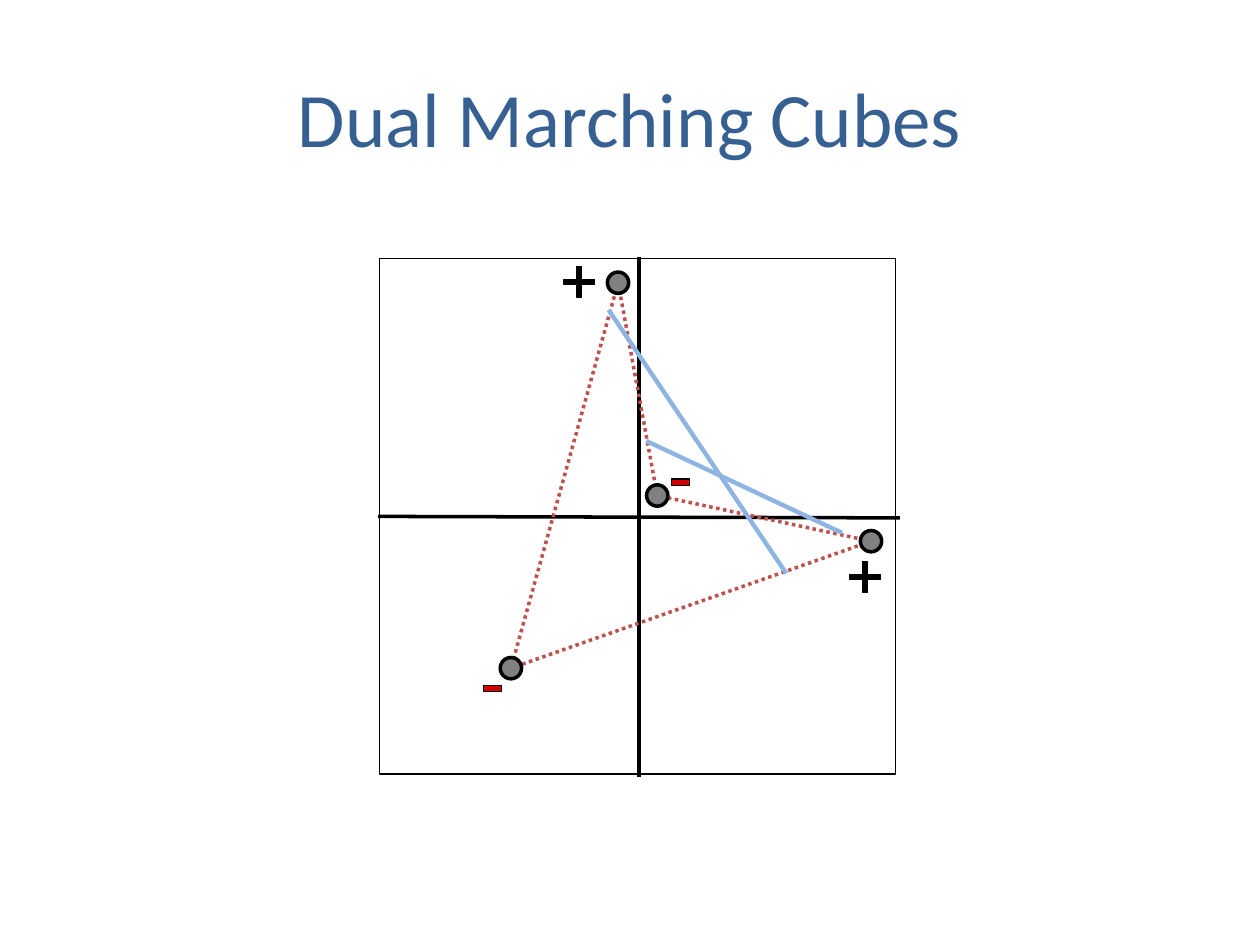
from dataclasses import dataclass

from lxml.etree import SubElement
from pptx import Presentation
from pptx.dml.color import RGBColor
from pptx.enum.dml import MSO_LINE
from pptx.enum.shapes import MSO_CONNECTOR, MSO_SHAPE
from pptx.enum.text import MSO_ANCHOR, PP_ALIGN
from pptx.oxml.ns import qn
from pptx.util import Cm, Pt


@dataclass(frozen=True)
class Theme:
    font: str = "Calibri"
    title_size: float = 44
    title: str = "376092"
    ink: str = "000000"
    edge: str = "C0504D"
    contour: str = "8EB4E3"
    minus: str = "D40000"
    node: str = "808080"
    hairline: float = 0
    edge_width: float = 2
    contour_width: float = 2.5


def write_text(tf, text, *, font, size, color, align=PP_ALIGN.CENTER):
    p = tf.paragraphs[0]
    p.alignment = align
    r = p.add_run()
    r.text = text
    r.font.name = font
    r.font.size = Pt(size)
    r.font.color.rgb = RGBColor.from_string(color)


class Sketch:
    """Draws on one slide in a theme; all lengths are in centimetres."""

    def __init__(self, slide, theme):
        self.s = slide
        self.theme = theme

    def title(self, text, left, top, width, height):
        sp = self.s.shapes.title
        sp.left, sp.top, sp.width, sp.height = map(Cm, (left, top, width, height))
        tf = sp.text_frame
        tf.word_wrap = True
        tf.vertical_anchor = MSO_ANCHOR.MIDDLE
        write_text(tf, text, font=self.theme.font, size=self.theme.title_size,
                   color=self.theme.title)

    def format(self, sp, fill, width):
        sp.shadow.inherit = False
        if fill:
            sp.fill.solid()
            sp.fill.fore_color.rgb = RGBColor.from_string(fill)
        else:
            sp.fill.background()
        sp.line.color.rgb = RGBColor.from_string(self.theme.ink)
        sp.line.width = Pt(width)

    def centred(self, kind, center, width, height, fill=None, line_width=0):
        x, y = center
        sp = self.s.shapes.add_shape(kind, Cm(x - width / 2), Cm(y - height / 2),
                                     Cm(width), Cm(height))
        self.format(sp, fill, line_width)

    def node(self, center):
        self.centred(MSO_SHAPE.OVAL, center, 0.43, 0.43, self.theme.node,
                     self.theme.edge_width)

    def minus(self, center):
        self.centred(MSO_SHAPE.RECTANGLE, center, 0.36, 0.13, self.theme.minus)

    def plus(self, center, arm=0.31, half=0.05):
        x, y = center
        offsets = [(-half, arm), (-half, half), (-arm, half), (-arm, -half),
                   (-half, -half), (-half, -arm), (half, -arm), (half, -half),
                   (arm, -half), (arm, half), (half, half), (half, arm)]
        points = [(Cm(x + dx), Cm(y + dy)) for dx, dy in offsets]
        builder = self.s.shapes.build_freeform(*points[0])
        builder.add_line_segments(points[1:], close=True)
        self.format(builder.convert_to_shape(), self.theme.ink, self.theme.hairline)

    def line(self, start, end, color, width, dash=None):
        cn = self.s.shapes.add_connector(MSO_CONNECTOR.STRAIGHT,
                                         *map(Cm, (*start, *end)))
        cn.line.color.rgb = RGBColor.from_string(color)
        cn.line.width = Pt(width)
        if dash:
            cn.line.dash_style = dash
        SubElement(cn._element.spPr, qn("a:effectLst"))


def main():
    prs = Presentation()
    prs.slide_width, prs.slide_height = Cm(25.4), Cm(19.05)
    theme = Theme()
    sketch = Sketch(prs.slides.add_slide(prs.slide_layouts[5]), theme)
    sketch.title("Dual Marching Cubes", 1.27, 0.76, 22.86, 3.18)

    # Four grid cells
    sketch.centred(MSO_SHAPE.RECTANGLE, (12.85, 10.41), 10.41, 10.39)
    sketch.line((12.88, 5.18), (12.88, 15.67), theme.ink, theme.hairline)
    sketch.line((7.62, 10.41), (18.14, 10.44), theme.ink, theme.hairline)

    # Dual cell: each node is joined to the next, the last to the first
    top, inner, right, bottom = nodes = [
        (12.46, 5.7), (13.25, 9.99), (17.56, 10.91), (10.3, 13.47)]
    for start, end in ((right, inner), (right, bottom), (top, bottom), (top, inner)):
        sketch.line(start, end, theme.edge, theme.edge_width, MSO_LINE.ROUND_DOT)

    for start, end in (((16.97, 10.74), (13.03, 8.89)),
                       ((15.85, 11.56), (12.27, 6.25))):
        sketch.line(start, end, theme.contour, theme.contour_width)

    for center in ((11.68, 5.68), (17.44, 11.63)):
        sketch.plus(center)
    for center in ((13.72, 9.72), (9.93, 13.88)):
        sketch.minus(center)
    for center in nodes:
        sketch.node(center)

    prs.save("out.pptx")


if __name__ == "__main__":
    main()
